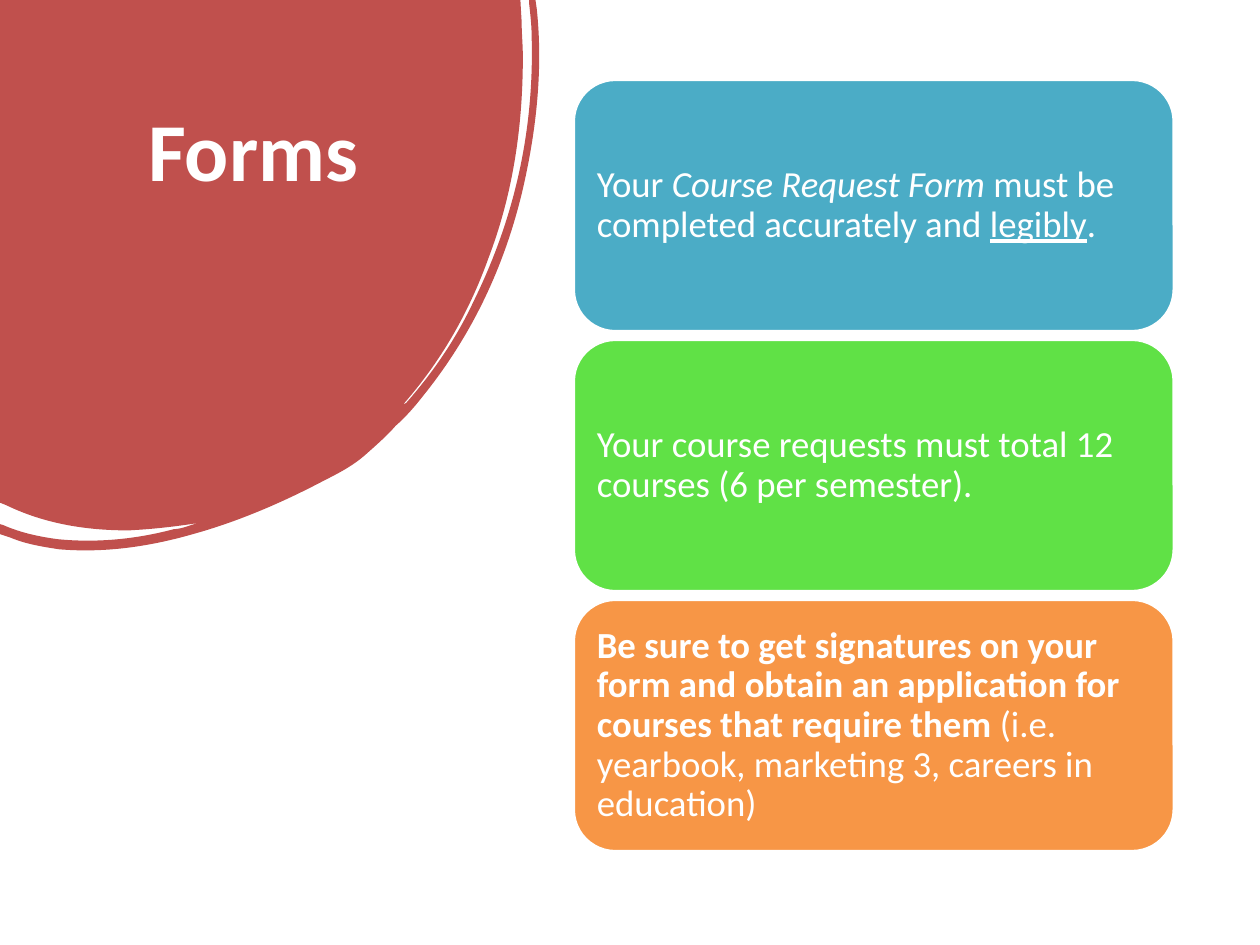
from lxml.etree import Element, SubElement
from pptx import Presentation
from pptx.dml.color import RGBColor
from pptx.enum.shapes import MSO_SHAPE
from pptx.enum.text import MSO_ANCHOR, MSO_AUTO_SIZE, PP_ALIGN
from pptx.oxml.ns import qn
from pptx.util import Inches, Pt

WHITE = RGBColor(0xFF, 0xFF, 0xFF)
RED = RGBColor(0xC0, 0x50, 0x4D)
BLUE = RGBColor(0x4B, 0xAC, 0xC6)
GREEN = RGBColor(0x60, 0xE1, 0x46)
ORANGE = RGBColor(0xF7, 0x96, 0x46)
FONT = "Calibri"

# Blob outline in inches: two numbers are a line end,
# six are a curve (two control points and the end)
BLOB_OUTLINE = [
    (0, 0), (4.13, 0), (4.14, 0.17),
    (4.14, 0.26, 4.15, 0.36, 4.15, 0.45),
    (4.15, 1.01, 4.07, 1.54, 3.88, 2.04),
    (3.72, 2.49, 3.49, 2.88, 3.2, 3.21),
    (3.22, 3.21, 3.23, 3.19, 3.24, 3.18),
    (3.44, 2.95, 3.62, 2.69, 3.76, 2.39),
    (4.07, 1.76, 4.24, 1.07, 4.22, 0.3),
    (4.22, 0.21, 4.21, 0.12, 4.2, 0.03),
    (4.2, 0), (4.25, 0), (4.26, 0.07),
    (4.31, 0.54, 4.26, 1.02, 4.15, 1.5),
    (4, 2.14, 3.73, 2.68, 3.36, 3.14),
    (3.29, 3.23, 3.22, 3.31, 3.14, 3.38),
    (3.07, 3.46, 2.99, 3.53, 2.9, 3.61),
    (2.81, 3.69, 2.7, 3.75, 2.58, 3.81),
    (2.24, 3.99, 1.89, 4.14, 1.53, 4.24),
    (1.18, 4.34, 0.83, 4.39, 0.47, 4.36),
    (0.34, 4.34, 0.21, 4.32, 0.09, 4.27),
    (0, 4.24), (0, 4.16), (0.03, 4.17),
    (0.17, 4.23, 0.31, 4.26, 0.46, 4.28),
    (0.77, 4.31, 1.08, 4.28, 1.38, 4.2),
    (1.41, 4.2, 1.45, 4.19, 1.48, 4.18),
    (1.51, 4.17, 1.54, 4.16, 1.58, 4.15),
    (1.39, 4.18, 1.21, 4.2, 1.02, 4.21),
    (0.69, 4.21, 0.36, 4.16, 0.05, 4.01),
    (0, 3.99),
]

# Each card: fill and its (text, style) spans
CARDS = [
    (BLUE, [("Your ", None), ("Course Request Form ", "italic"),
            ("must be completed accurately and ", None),
            ("legibly", "underline"), (".", None)]),
    (GREEN, [("Your course requests must total 12 courses (6 per semester).", None)]),
    (ORANGE, [("Be sure to get signatures on your form and obtain an application "
               "for courses that require them ", "bold"),
              ("(i.e. yearbook, marketing 3, careers in education)", None)]),
]


def bend_segment(line, curve):
    """Turn a straight outline segment into a cubic curve."""
    bend = Element(qn("a:cubicBezTo"))
    for x, y in zip(curve[::2], curve[1::2]):
        SubElement(bend, qn("a:pt"), x=str(Inches(x)), y=str(Inches(y)))
    line.getparent().replace(line, bend)


def add_blob(page, left, top, width, height):
    corners = [(Inches(segment[-2]), Inches(segment[-1])) for segment in BLOB_OUTLINE]
    builder = page.shapes.build_freeform(*corners[0])
    builder.add_line_segments(corners[1:], close=True)
    blob = builder.convert_to_shape()
    blob.left, blob.top, blob.width, blob.height = left, top, width, height

    # Curves reach a little beyond the corners, so the outline gets the full box
    outline = next(blob.element.iter(qn("a:path")))
    outline.set("w", str(width))
    outline.set("h", str(height))
    for line, segment in zip(outline.findall(qn("a:lnTo")), BLOB_OUTLINE[1:]):
        if len(segment) == 6:
            bend_segment(line, segment)

    blob.shadow.inherit = False
    blob.fill.solid()
    blob.fill.fore_color.rgb = RED
    blob.line.fill.background()


def place_title(page, left, top, width, height):
    title = page.shapes.title
    page.shapes.element.append(title.element)  # bring in front of the blob
    title.left, title.top, title.width, title.height = left, top, width, height
    frame = title.text_frame
    frame.text = "Forms"
    frame.word_wrap = True
    frame.auto_size = MSO_AUTO_SIZE.NONE
    frame.vertical_anchor = MSO_ANCHOR.TOP
    para = frame.paragraphs[0]
    para.alignment = PP_ALIGN.CENTER
    para.font.name = FONT
    para.font.size = Pt(47)
    para.font.bold = True
    para.font.color.rgb = WHITE


def add_card(page, left, top, width, height, color, spans):
    card = page.shapes.add_shape(MSO_SHAPE.ROUNDED_RECTANGLE, left, top, width, height)
    card.shadow.inherit = False
    card.fill.solid()
    card.fill.fore_color.rgb = color
    card.line.color.rgb = WHITE
    card.line.width = Pt(2)
    frame = card.text_frame
    frame.word_wrap = True
    frame.vertical_anchor = MSO_ANCHOR.MIDDLE
    frame.margin_left = frame.margin_right = Inches(0.09)
    frame.margin_top = frame.margin_bottom = Inches(0.09)
    para = frame.paragraphs[0]
    para.alignment = PP_ALIGN.LEFT
    para.line_spacing = 0.9
    para.font.name = FONT
    para.font.size = Pt(21)
    para.font.color.rgb = WHITE
    for text, style in spans:
        span = para.add_run()
        span.text = text
        if style:
            setattr(span.font, style, True)


def add_cards(page, left, top, width, height, gap):
    card_height = (height - gap * (len(CARDS) - 1)) // len(CARDS)
    for index, (color, spans) in enumerate(CARDS):
        card_top = top + index * (card_height + gap)
        add_card(page, left, card_top, width, card_height, color, spans)


def main():
    deck = Presentation()
    deck.slide_width, deck.slide_height = Inches(10), Inches(7.5)
    page = deck.slides.add_slide(deck.slide_layouts[5])
    add_blob(page, Inches(0), Inches(0), Inches(4.28), Inches(4.37))
    place_title(page, Inches(0.69), Inches(0.74), Inches(2.64), Inches(2.22))
    add_cards(page, Inches(4.55), Inches(0.63), Inches(4.77), Inches(6.13), Inches(0.06))
    deck.save("out.pptx")


if __name__ == "__main__":
    main()
